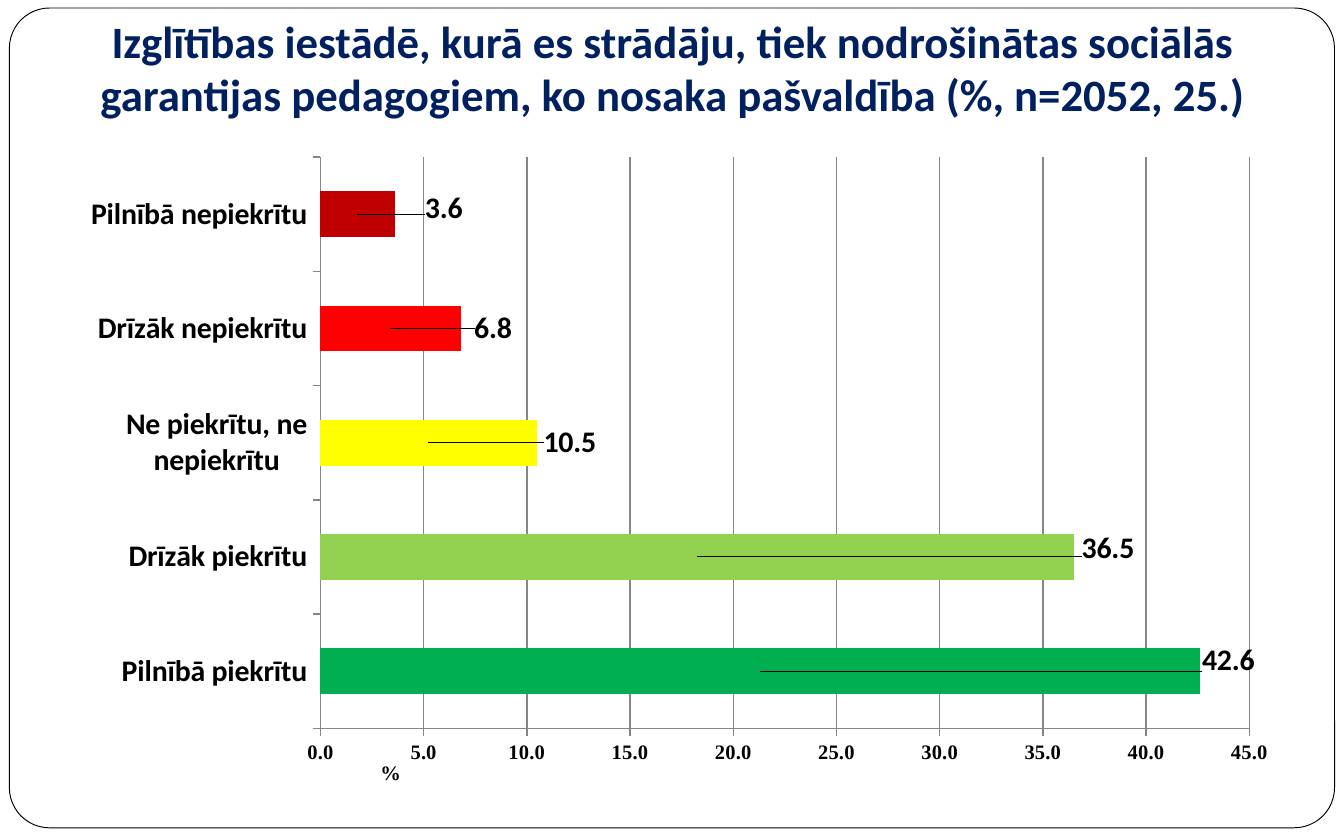
import pptx
import pptx.util
import pptx.chart.data
import pptx.dml.color
import pptx.enum.chart
import pptx.enum.shapes
import pptx.enum.text
import pptx.oxml
import pptx.oxml.ns

Inches = pptx.util.Inches
Pt = pptx.util.Pt

# answer, share in %, bar colour, label shift from the bar's middle (chart fractions)
ANSWERS = [
    ("Pilnībā piekrītu", 42.6, "00B050", (0.375, -0.016)),
    ("Drīzāk piekrītu", 36.5, "92D050", (0.329, -0.013)),
    ("Ne piekrītu, ne nepiekrītu", 10.5, "FFFF00", (0.113, 0)),
    ("Drīzāk nepiekrītu", 6.8, "FF0000", (0.082, 0)),
    ("Pilnībā nepiekrītu", 3.6, "C00000", (0.069, -0.009)),
]
HEADING = ("Izglītības iestādē, kurā es strādāju, tiek nodrošinātas sociālās "
           "garantijas pedagogiem, ko nosaka pašvaldība (%, n=2052, 25.)")
GRID = "868686"


def color(hex_code):
    return pptx.dml.color.RGBColor.from_string(hex_code)


def style_font(font, size, name, hex_code="000000"):
    font.size, font.name, font.bold = Pt(size), name, True
    font.color.rgb = color(hex_code)


def style_line(line, hex_code, width):
    line.color.rgb = color(hex_code)
    line.width = Pt(width)


def set_layout(parent, index, **settings):
    """Give a chart part a manual layout, as child number index."""
    for old in parent.findall(pptx.oxml.ns.qn("c:layout")):
        parent.remove(old)
    items = "".join(f'<c:{tag} val="{value}"/>' for tag, value in settings.items())
    parent.insert(index, pptx.oxml.parse_xml(
        f'<c:layout {pptx.oxml.ns.nsdecls("c")}>'
        f"<c:manualLayout>{items}</c:manualLayout></c:layout>"))


def add_frame(slide, box):
    frame = slide.shapes.add_shape(
        pptx.enum.shapes.MSO_SHAPE.ROUNDED_RECTANGLE, *box)
    frame.adjustments[0] = 0.049
    frame.shadow.inherit = False
    frame.fill.solid()
    frame.fill.fore_color.rgb = color("FFFFFF")
    style_line(frame.line, "000000", 0.5)
    # Send behind the title
    slide.shapes._spTree.insert(2, frame._element)


def add_heading(slide, box):
    title = slide.shapes.title
    title.left, title.top, title.width, title.height = box
    text = title.text_frame
    text.word_wrap = True
    text.auto_size = pptx.enum.text.MSO_AUTO_SIZE.NONE
    text.vertical_anchor = pptx.enum.text.MSO_ANCHOR.BOTTOM
    text.margin_left = text.margin_right = text.margin_bottom = Inches(0.1)
    text.margin_top = Inches(0.05)
    paragraph = text.paragraphs[0]
    paragraph.alignment = pptx.enum.text.PP_ALIGN.CENTER
    run = paragraph.add_run()
    run.text = HEADING
    style_font(run.font, 24, "Calibri", "002060")


def add_answers_chart(slide, box):
    data = pptx.chart.data.CategoryChartData(number_format="0.0")
    data.categories = [answer[0] for answer in ANSWERS]
    data.add_series("%", [answer[1] for answer in ANSWERS])
    chart = slide.shapes.add_chart(
        pptx.enum.chart.XL_CHART_TYPE.BAR_STACKED, *box, data).chart
    chart.has_legend = False
    chart.font.size, chart.font.name = Pt(10), "Times New Roman"
    chart.font.color.rgb = color("000000")
    set_layout(chart._chartSpace.chart.plotArea, 0, layoutTarget="inner",
               xMode="edge", yMode="edge", x=0.219, y=0.002, w=0.744, h=0.857)

    # Unit below the value axis
    chart.has_title = True
    unit = chart.chart_title.text_frame.paragraphs[0].add_run()
    unit.text = "%"
    style_font(unit.font, 11, "Times New Roman")
    set_layout(chart.chart_title._element, 1,
               xMode="edge", yMode="edge", x=0.264, y=0.9)

    # Axes
    shares, answers = chart.value_axis, chart.category_axis
    shares.minimum_scale, shares.maximum_scale, shares.major_unit = 0, 45, 5
    shares.has_major_gridlines = True
    style_line(shares.major_gridlines.format.line, GRID, 0.75)
    shares.tick_labels.number_format = "0.0"
    shares.tick_labels.number_format_is_linked = False
    style_font(shares.tick_labels.font, 11, "Times New Roman")
    style_font(answers.tick_labels.font, 16, "Calibri")
    for axis in (shares, answers):
        axis.major_tick_mark = pptx.enum.chart.XL_TICK_MARK.OUTSIDE
        style_line(axis.format.line, GRID, 0.75)

    # Bars and their labels
    plot = chart.plots[0]
    plot.gap_width, plot.overlap, plot.vary_by_categories = 150, 100, False
    series = plot.series[0]
    series.format.fill.solid()
    series.format.fill.fore_color.rgb = color("4F81BD")
    labels = series.data_labels
    labels.show_value = True
    labels.number_format, labels.number_format_is_linked = "0.0", False
    style_font(labels.font, 16, "Calibri")
    for index, (_, _, bar_color, _) in enumerate(ANSWERS):
        point = series.points[index]
        point.format.fill.solid()
        point.format.fill.fore_color.rgb = color(bar_color)
        style_font(point.data_label.font, 16, "Calibri")
    for label, answer in zip(labels._element.xpath("c:dLbl"), ANSWERS):
        shift_x, shift_y = answer[3]
        set_layout(label, 1, x=shift_x, y=shift_y)


def main():
    deck = pptx.Presentation()
    deck.slide_width, deck.slide_height = Inches(10), Inches(6.25)
    slide = deck.slides.add_slide(deck.slide_layouts[5])
    add_frame(slide, [Inches(v) for v in (0.07, 0.06, 9.86, 6.1)])
    add_heading(slide, [Inches(v) for v in (0.2, 0, 9.61, 1)])
    add_answers_chart(slide, [Inches(v) for v in (0.35, 1.16, 9.29, 4.96)])
    deck.save("out.pptx")


if __name__ == "__main__":
    main()
